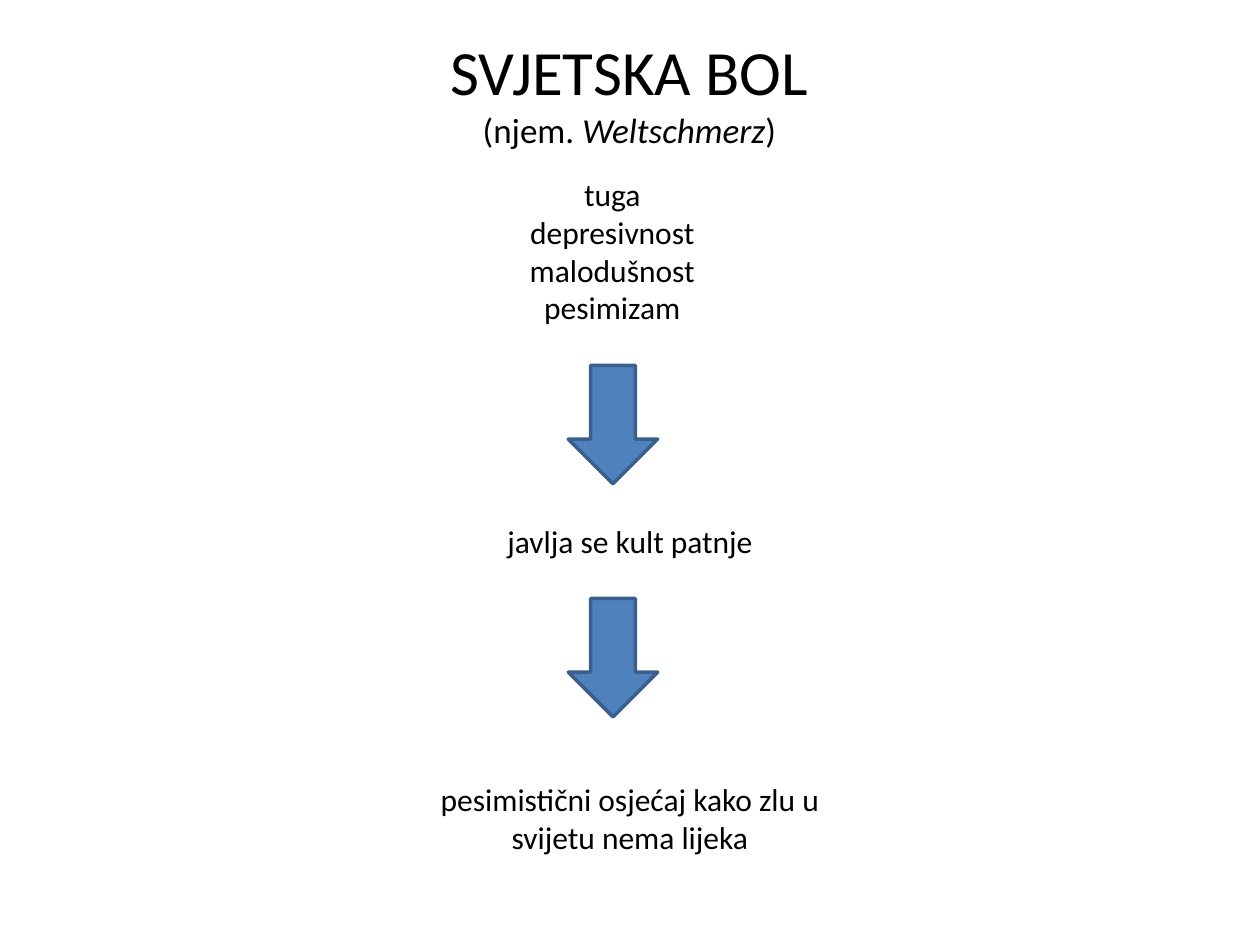
from dataclasses import dataclass

import pptx
import pptx.dml.color
import pptx.enum.shapes
import pptx.enum.text
import pptx.util

Inches = pptx.util.Inches
Pt = pptx.util.Pt
RGB = pptx.dml.color.RGBColor


@dataclass(frozen=True)
class Theme:
    """Colours and type sizes of the slide."""
    font: str = "Calibri"
    text: str = "000000"
    fill: str = "4F81BD"
    line: str = "3A5F8C"
    title: int = 36
    subtitle: int = 20
    body: int = 18
    outline: int = 2


class Deck:
    """Adds styled elements to the current slide."""

    def __init__(self, prs, theme):
        self.theme = theme
        self.s = prs.slides.add_slide(prs.slide_layouts[5])

    def style(self, p, size):
        p.alignment = pptx.enum.text.PP_ALIGN.CENTER
        p.font.name = self.theme.font
        p.font.size = Pt(size)
        p.font.color.rgb = RGB.from_string(self.theme.text)

    def frame(self, sp):
        tf = sp.text_frame
        tf.word_wrap = True
        tf.auto_size = pptx.enum.text.MSO_AUTO_SIZE.NONE
        tf.vertical_anchor = pptx.enum.text.MSO_ANCHOR.TOP
        return tf

    def title(self, box, heading, subtitle):
        sp = self.s.shapes.title
        sp.left, sp.top, sp.width, sp.height = map(Inches, box)
        p = self.frame(sp).paragraphs[0]
        self.style(p, self.theme.title)
        p.add_run().text = heading
        p.add_line_break()
        for text, italic in subtitle:
            r = p.add_run()
            r.text = text
            r.font.size = Pt(self.theme.subtitle)
            r.font.italic = italic

    def text(self, box, *lines):
        tf = self.frame(self.s.shapes.add_textbox(*map(Inches, box)))
        tf.text = "\n".join(lines)
        for p in tf.paragraphs:
            self.style(p, self.theme.body)

    def down_arrow(self, box):
        sp = self.s.shapes.add_shape(
            pptx.enum.shapes.MSO_SHAPE.DOWN_ARROW, *map(Inches, box))
        sp.shadow.inherit = False
        sp.fill.solid()
        sp.fill.fore_color.rgb = RGB.from_string(self.theme.fill)
        sp.line.color.rgb = RGB.from_string(self.theme.line)
        sp.line.width = Pt(self.theme.outline)


def main():
    prs = pptx.Presentation()
    prs.slide_width, prs.slide_height = Inches(10), Inches(7.5)
    deck = Deck(prs, Theme())
    deck.title((2.93, 0.21, 4.13, 1.65), "SVJETSKA BOL",
               [("(njem. ", False), ("Weltschmerz", True), (")", False)])
    deck.text((2.93, 1.34, 3.86, 1.31),
              "tuga", "depresivnost", "malodušnost", "pesimizam")
    deck.text((3.74, 4.09, 2.52, 0.4), "javlja se kult patnje")
    deck.text((3.11, 6.14, 3.78, 0.71),
              "pesimistični osjećaj kako zlu u svijetu nema lijeka")
    for top in (2.9, 4.75):
        deck.down_arrow((4.51, top, 0.71, 0.94))
    prs.save("out.pptx")


if __name__ == "__main__":
    main()
